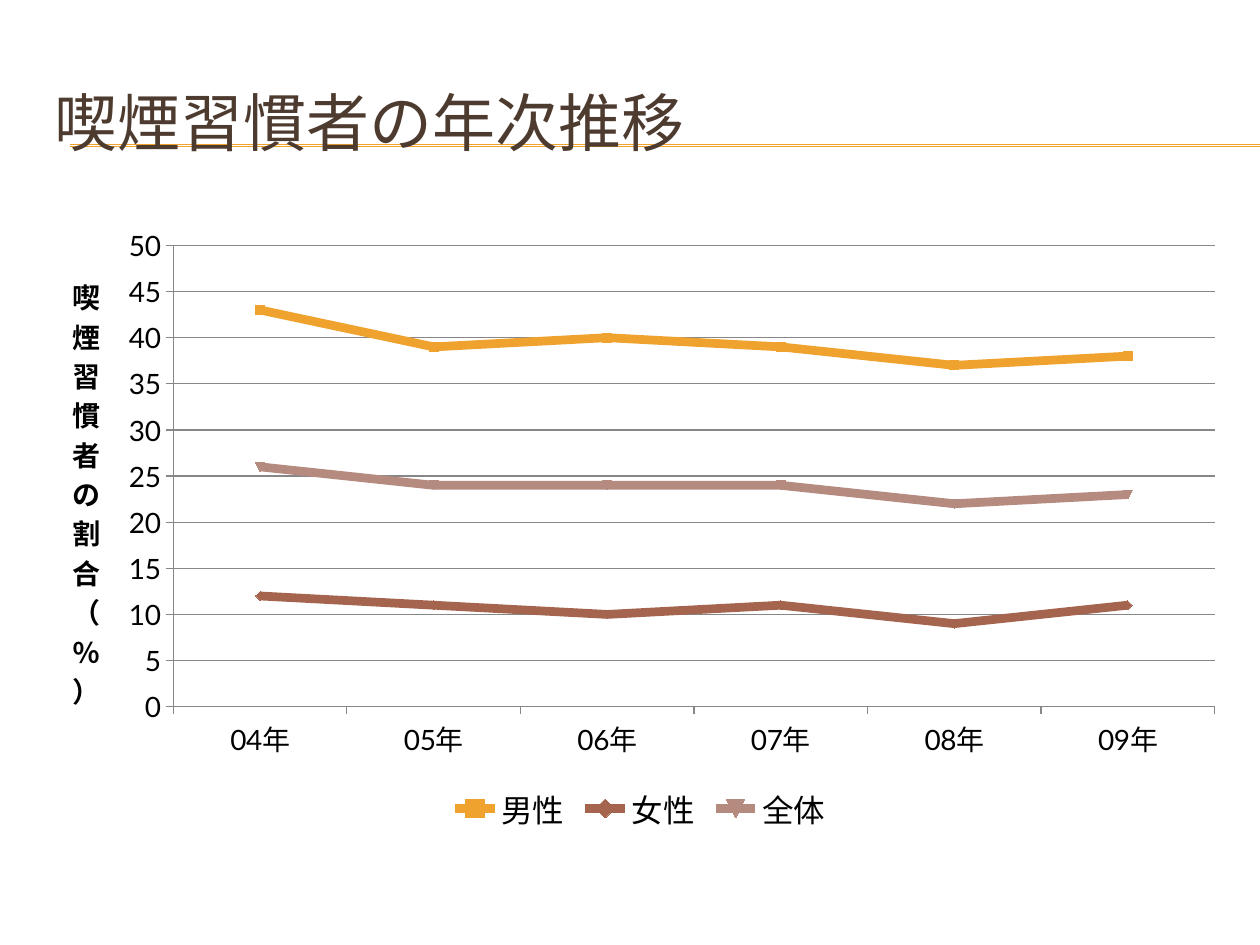
import dataclasses

import lxml.etree
import pptx
import pptx.chart.data
import pptx.dml.color
import pptx.enum.chart
import pptx.enum.shapes
import pptx.enum.text
import pptx.oxml
import pptx.oxml.ns
import pptx.util
from pptx.util import Cm

FONT = "Lato"
COLORS = {
    "title": "4E3B30",
    "text": "000000",
    "rule": "F0A22E",
    "grid": "878787",
    "male": "F0A22E",
    "female": "A5644E",
    "total": "B58B80",
}
YEARS = ["04年", "05年", "06年", "07年", "08年", "09年"]


@dataclasses.dataclass
class SmokingRate:
    name: str
    values: list[int]
    color: str


@dataclasses.dataclass
class Rule:
    left: float
    right: float
    top: float


RATES = [
    SmokingRate("男性", [43, 39, 40, 39, 37, 38], "male"),
    SmokingRate("女性", [12, 11, 10, 11, 9, 11], "female"),
    SmokingRate("全体", [26, 24, 24, 24, 22, 23], "total"),
]
RULES = [Rule(1.42, 25.4, 2.92), Rule(1.42, 25.4, 2.95)]


def rgb(name: str) -> pptx.dml.color.RGBColor:
    return pptx.dml.color.RGBColor.from_string(COLORS[name])


def style_font(font, size: float, color: str, bold: bool = False) -> None:
    font.name = FONT
    font.size = pptx.util.Pt(size)
    font.bold = bold
    font.color.rgb = rgb(color)


def style_line(line, color: str, width: float) -> None:
    line.color.rgb = rgb(color)
    line.width = pptx.util.Pt(width)


def draw_rule(slide, rule: Rule) -> None:
    connector = slide.shapes.add_connector(
        pptx.enum.shapes.MSO_CONNECTOR.STRAIGHT,
        Cm(rule.left), Cm(rule.top), Cm(rule.right), Cm(rule.top))
    style_line(connector.line, "rule", 0.75)
    lxml.etree.SubElement(
        connector._element.spPr, pptx.oxml.ns.qn("a:effectLst"))


def draw_title(slide, text: str) -> None:
    title = slide.shapes.title
    title.left, title.top = Cm(0.84), Cm(1.27)
    title.width, title.height = Cm(24.13), Cm(2.34)
    frame = title.text_frame
    frame.text = text
    frame.vertical_anchor = pptx.enum.text.MSO_ANCHOR.MIDDLE
    frame.paragraphs[0].alignment = pptx.enum.text.PP_ALIGN.LEFT
    style_font(frame.paragraphs[0].runs[0].font, 36, "title")
    # Keep the title in front of the rules
    slide.shapes._spTree.append(title._element)


def set_plot_area(chart, x: float, y: float, w: float, h: float) -> None:
    """Place the inner plot area as fractions of the chart."""
    plot_area = chart._chartSpace.chart.plotArea
    for old_layout in plot_area.findall(pptx.oxml.ns.qn("c:layout")):
        plot_area.remove(old_layout)
    layout = pptx.oxml.parse_xml(
        f'<c:layout {pptx.oxml.ns.nsdecls("c")}><c:manualLayout>'
        '<c:layoutTarget val="inner"/><c:xMode val="edge"/>'
        f'<c:yMode val="edge"/><c:x val="{x}"/><c:y val="{y}"/>'
        f'<c:w val="{w}"/><c:h val="{h}"/></c:manualLayout></c:layout>')
    plot_area.insert(0, layout)


def style_axes(chart) -> None:
    for axis in (chart.category_axis, chart.value_axis):
        axis.major_tick_mark = pptx.enum.chart.XL_TICK_MARK.OUTSIDE
        axis.minor_tick_mark = pptx.enum.chart.XL_TICK_MARK.NONE
        style_font(axis.tick_labels.font, 16, "text")
        style_line(axis.format.line, "grid", 0.75)

    value_axis = chart.value_axis
    value_axis.minimum_scale, value_axis.maximum_scale = 0, 50
    value_axis.major_unit = 5
    value_axis.has_major_gridlines = True
    style_line(value_axis.major_gridlines.format.line, "grid", 0.75)

    # Upright stacked characters in the axis title
    frame = value_axis.axis_title.text_frame
    frame.text = "喫煙習慣者の割合（％）"
    style_font(frame.paragraphs[0].runs[0].font, 16, "text", bold=True)
    body = frame._txBody.bodyPr
    body.set("rot", "0")
    body.set("vert", "wordArtVertRtl")


def draw_chart(slide, rates: list[SmokingRate]) -> None:
    data = pptx.chart.data.CategoryChartData()
    data.categories = YEARS
    for rate in rates:
        data.add_series(rate.name, rate.values)
    chart = slide.shapes.add_chart(
        pptx.enum.chart.XL_CHART_TYPE.LINE_MARKERS,
        Cm(0.84), Cm(4.32), Cm(24.13), Cm(12.57), data).chart
    chart.has_title = False
    style_font(chart.font, 18, "text")
    chart.plots[0].vary_by_categories = False
    set_plot_area(chart, 0.11, 0.05, 0.87, 0.74)
    style_axes(chart)

    # Legend
    chart.has_legend = True
    chart.legend.position = pptx.enum.chart.XL_LEGEND_POSITION.BOTTOM
    chart.legend.include_in_layout = False
    style_font(chart.legend.font, 18, "text")

    # Series
    for series, rate in zip(chart.plots[0].series, rates):
        series.smooth = False
        style_line(series.format.line, rate.color, 5)
        series.marker.format.fill.solid()
        series.marker.format.fill.fore_color.rgb = rgb(rate.color)
        style_line(series.marker.format.line, rate.color, 0.75)


def main() -> None:
    presentation = pptx.Presentation()
    presentation.slide_width, presentation.slide_height = Cm(25.4), Cm(19.05)
    slide = presentation.slides.add_slide(presentation.slide_layouts[5])
    for rule in RULES:
        draw_rule(slide, rule)
    draw_title(slide, "喫煙習慣者の年次推移")
    draw_chart(slide, RATES)
    presentation.save("out.pptx")


if __name__ == "__main__":
    main()
